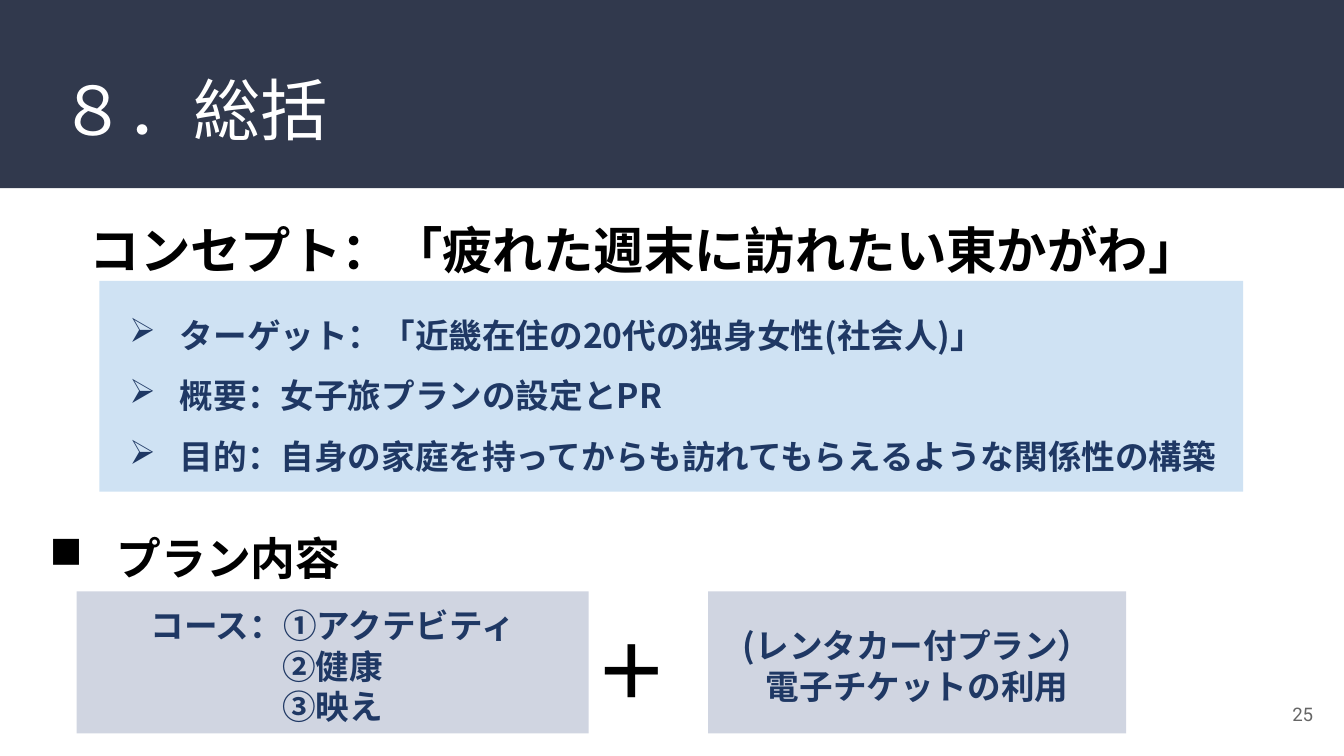
from dataclasses import dataclass
from lxml.etree import SubElement
from pptx import Presentation
from pptx.dml.color import RGBColor as RGB
from pptx.enum.shapes import MSO_SHAPE as Shape
from pptx.enum.text import MSO_ANCHOR as Anchor, PP_ALIGN as Align
from pptx.oxml.ns import qn
from pptx.util import Pt


@dataclass(frozen=True)
class Theme:
    font: str = "Noto Sans CJK JP"
    num_font: str = "Roboto"
    band: str = "31394D"
    white: str = "FFFFFF"
    black: str = "000000"
    navy: str = "1F3864"
    sky: str = "CFE2F3"
    mist: str = "D0D5E1"
    grey: str = "666666"
    title: int = 36
    head: int = 27
    sub: int = 24
    body: int = 18
    plus: int = 40
    num: int = 10


T = Theme()
PAD = (7.2, 7.2, 7.2, 7.2)
CARD_PAD = (5, 6.5, 5, 3)


def add_mark(para, mark, color, left, hang):
    props = para._p.get_or_add_pPr()
    props.set("marL", str(Pt(left)))
    props.set("indent", str(Pt(-hang)))
    tint = SubElement(props, qn("a:buClr"))
    SubElement(tint, qn("a:srgbClr"), val=color)
    SubElement(props, qn("a:buChar"), char=mark)


def set_text(shape, text, size, color, bold=True, align=Align.LEFT,
             anchor=Anchor.TOP, pad=PAD, font=T.font, mark=None, hang=0, space=None):
    frame = shape.text_frame
    frame.text = text
    frame.word_wrap = True
    frame.vertical_anchor = anchor
    frame.margin_left, frame.margin_top, frame.margin_right, frame.margin_bottom = map(Pt, pad)
    for para in frame.paragraphs:
        para.alignment = align
        if space:
            para.line_spacing = space
        if mark:
            add_mark(para, mark, color, 36, hang)
        for run in para.runs:
            run.font.name = font
            run.font.size = Pt(size)
            run.font.bold = bold
            run.font.color.rgb = RGB.from_string(color)
            SubElement(run._r.get_or_add_rPr(), qn("a:ea"), typeface=font)


def add_box(slide, area, fill):
    box = slide.shapes.add_shape(Shape.RECTANGLE, *map(Pt, area))
    box.shadow.inherit = False
    box.fill.solid()
    box.fill.fore_color.rgb = RGB.from_string(fill)
    box.line.fill.background()
    return box


def add_label(slide, area, text, size, color, **style):
    label = slide.shapes.add_textbox(*map(Pt, area))
    set_text(label, text, size, color, **style)


def add_card(slide, left, width, text):
    card = add_box(slide, (left, 316.8, width, 76.2), T.mist)
    set_text(card, text, T.body, T.navy, align=Align.CENTER,
             anchor=Anchor.MIDDLE, pad=CARD_PAD, space=Pt(21.7))


def add_title(slide, text):
    title = slide.shapes.title
    title.left, title.top, title.width, title.height = map(Pt, (24.5, 29.5, 671, 49))
    set_text(title, text, T.title, T.white, bold=False)
    tree = slide.shapes._spTree
    tree.remove(title._element)
    tree.append(title._element)


def main():
    deck = Presentation()
    deck.slide_width, deck.slide_height = Pt(720), Pt(405)
    slide = deck.slides.add_slide(deck.slide_layouts[5])

    add_box(slide, (0, 0, 720, 100.8), T.band)
    add_title(slide, "８．総括")
    add_label(slide, (667.4, 367.2, 43.2, 31), "25", T.num, T.grey, bold=False,
              align=Align.RIGHT, anchor=Anchor.MIDDLE, font=T.num_font)

    add_label(slide, (41, 110.2, 638.6, 49), "コンセプト：「疲れた週末に訪れたい東かがわ」",
              T.head, T.black)
    points = add_box(slide, (53.3, 150.5, 612.7, 113), T.sky)
    set_text(points, "ターゲット：「近畿在住の20代の独身女性(社会人)」\n"
             "概要：女子旅プランの設定とPR\n"
             "目的：自身の家庭を持ってからも訪れてもらえるような関係性の構築",
             T.body, T.navy, mark="➢", hang=27, space=Pt(32.5))

    add_label(slide, (19.4, 277.2, 638.6, 49), "プラン内容", T.sub, T.black,
              mark="■", hang=36)
    add_card(slide, 379.4, 223.9, "(レンタカー付プラン）\n電子チケットの利用")
    add_card(slide, 41, 274.3, "コース：➀アクテビティ\n②健康\n③映え")
    add_label(slide, (255.6, 327.6, 165.6, 54), "＋", T.plus, T.black, align=Align.CENTER)
    deck.save("out.pptx")


if __name__ == "__main__":
    main()
